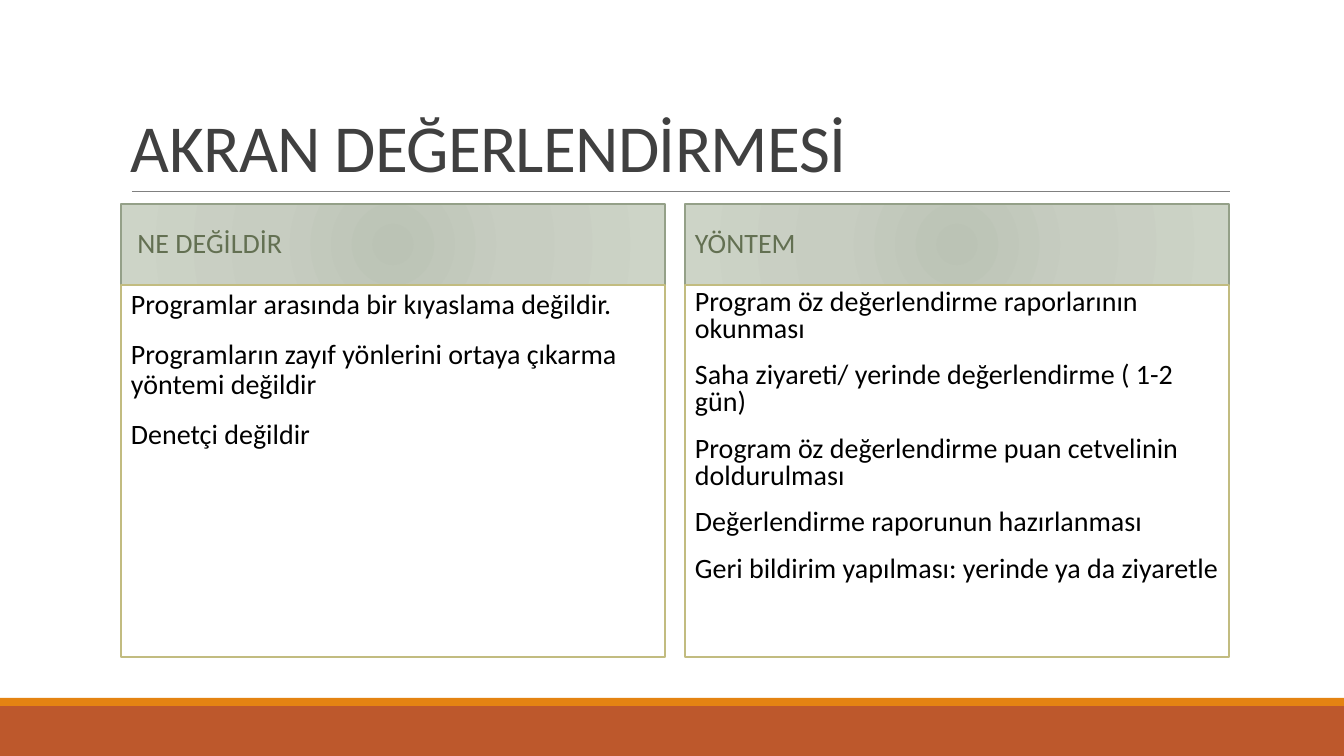
from pptx import Presentation
from pptx.dml.color import RGBColor
from pptx.enum.shapes import MSO_CONNECTOR, MSO_SHAPE
from pptx.enum.text import MSO_ANCHOR, PP_ALIGN
from pptx.oxml import parse_xml
from pptx.oxml.ns import nsdecls
from pptx.util import Pt
from lxml import etree

RECTANGLE = MSO_SHAPE.RECTANGLE
STRAIGHT = MSO_CONNECTOR.STRAIGHT
TOP, MIDDLE, BOTTOM = MSO_ANCHOR.TOP, MSO_ANCHOR.MIDDLE, MSO_ANCHOR.BOTTOM
LEFT = PP_ALIGN.LEFT

TITLE = "AKRAN DEĞERLENDİRMESİ"
COLUMNS = [
    {
        "heading": " NE DEĞİLDİR",
        "spacing": 0.9,
        "items": [
            "Programlar arasında bir kıyaslama değildir.",
            "Programların zayıf yönlerini ortaya çıkarma yöntemi değildir",
            "Denetçi değildir",
        ],
    },
    {
        "heading": "YÖNTEM",
        "spacing": 0.8,
        "items": [
            "Program öz değerlendirme raporlarının okunması",
            "Saha ziyareti/ yerinde değerlendirme ( 1-2 gün)",
            "Program öz değerlendirme puan cetvelinin doldurulması",
            "Değerlendirme raporunun hazırlanması",
            "Geri bildirim yapılması: yerinde ya da ziyaretle",
        ],
    },
]
FOOTER_BANDS = [(706, 50, "BD582C"), (698, 8, "E48312")]
HEADING_STOPS = [(0, "BBC3B5"), (45, "C7CDC1"), (100, "CDD4C7")]

PAGE_WIDTH, PAGE_HEIGHT = 1344, 756
COLUMN_LEFT, COLUMN_WIDTH, COLUMN_GAP = 121, 544, 20
HEADING_TOP, HEADING_HEIGHT = 204, 81
BODY_TOP, BODY_HEIGHT = 285, 372
INSET_X, INSET_Y = 10, 5
EMU_PER_PX = 914400 / 100.8


def px(length):
    return round(length * EMU_PER_PX)


def color(code):
    return RGBColor.from_string(code)


def add_box(page, left, top, width, height, fill=None, line=None, line_width=1):
    box = page.shapes.add_shape(RECTANGLE, px(left), px(top), px(width), px(height))
    box.shadow.inherit = False
    if fill:
        box.fill.solid()
        box.fill.fore_color.rgb = color(fill)
    else:
        box.fill.background()
    if line:
        box.line.color.rgb = color(line)
        box.line.width = Pt(line_width)
    else:
        box.line.fill.background()
    return box


def fill_radial(box, stops):
    stop_xml = "".join(
        f'<a:gs pos="{position * 1000}"><a:srgbClr val="{code}"/></a:gs>'
        for position, code in stops
    )
    gradient = parse_xml(
        f'<a:gradFill {nsdecls("a")} rotWithShape="1"><a:gsLst>{stop_xml}</a:gsLst>'
        '<a:path path="circle"><a:fillToRect l="100000" t="100000" r="100000" b="100000"/>'
        "</a:path></a:gradFill>"
    )
    properties = box._element.spPr
    properties.replace(properties.find("{*}noFill"), gradient)


def write(box, lines, size, code, anchor, spacing, before=0, after=0):
    frame = box.text_frame
    frame.word_wrap = True
    frame.vertical_anchor = anchor
    frame.margin_left = frame.margin_right = px(INSET_X)
    frame.margin_top = frame.margin_bottom = px(INSET_Y)
    frame.text = "\n".join(lines)
    for para in frame.paragraphs:
        para.alignment = LEFT
        para.line_spacing = spacing
        para.space_before = Pt(before)
        para.space_after = Pt(after)
        for span in para.runs:
            span.font.name = "Calibri"
            span.font.size = Pt(size)
            span.font.color.rgb = color(code)


def add_title(page):
    box = page.shapes.add_textbox(px(121), px(31), px(1109), px(160))
    write(box, [TITLE], 48, "404040", BOTTOM, 0.85)
    for span in box.text_frame.paragraphs[0].runs:
        span.font._element.set("spc", "-50")


def add_title_rule(page):
    rule = page.shapes.add_connector(STRAIGHT, px(132), px(191), px(1230), px(191))
    rule.line.color.rgb = color("808080")
    rule.line.width = Pt(0.5)
    properties = rule._element.spPr
    etree.SubElement(properties, properties.tag.replace("presentationml", "drawingml").replace("spPr", "effectLst"))


def add_column(page, left, column):
    heading = add_box(page, left, HEADING_TOP, COLUMN_WIDTH, HEADING_HEIGHT, line="94A088")
    fill_radial(heading, HEADING_STOPS)
    write(heading, [column["heading"]], 20, "637052", MIDDLE, 0.9, 12, 2)
    body = add_box(page, left, BODY_TOP, COLUMN_WIDTH, BODY_HEIGHT, "FFFFFF", "C2BC80", 1.25)
    write(body, column["items"], 20, "000000", TOP, column["spacing"], 12, 2)
    body.text_frame.margin_right = 0


def main():
    deck = Presentation()
    deck.slide_width, deck.slide_height = px(PAGE_WIDTH), px(PAGE_HEIGHT)
    page = deck.slides.add_slide(deck.slide_layouts[6])
    for top, height, code in FOOTER_BANDS:
        add_box(page, 0, top, PAGE_WIDTH, height, code)
    add_title_rule(page)
    add_title(page)
    for index, column in enumerate(COLUMNS):
        add_column(page, COLUMN_LEFT + index * (COLUMN_WIDTH + COLUMN_GAP), column)
    deck.save("out.pptx")


if __name__ == "__main__":
    main()
